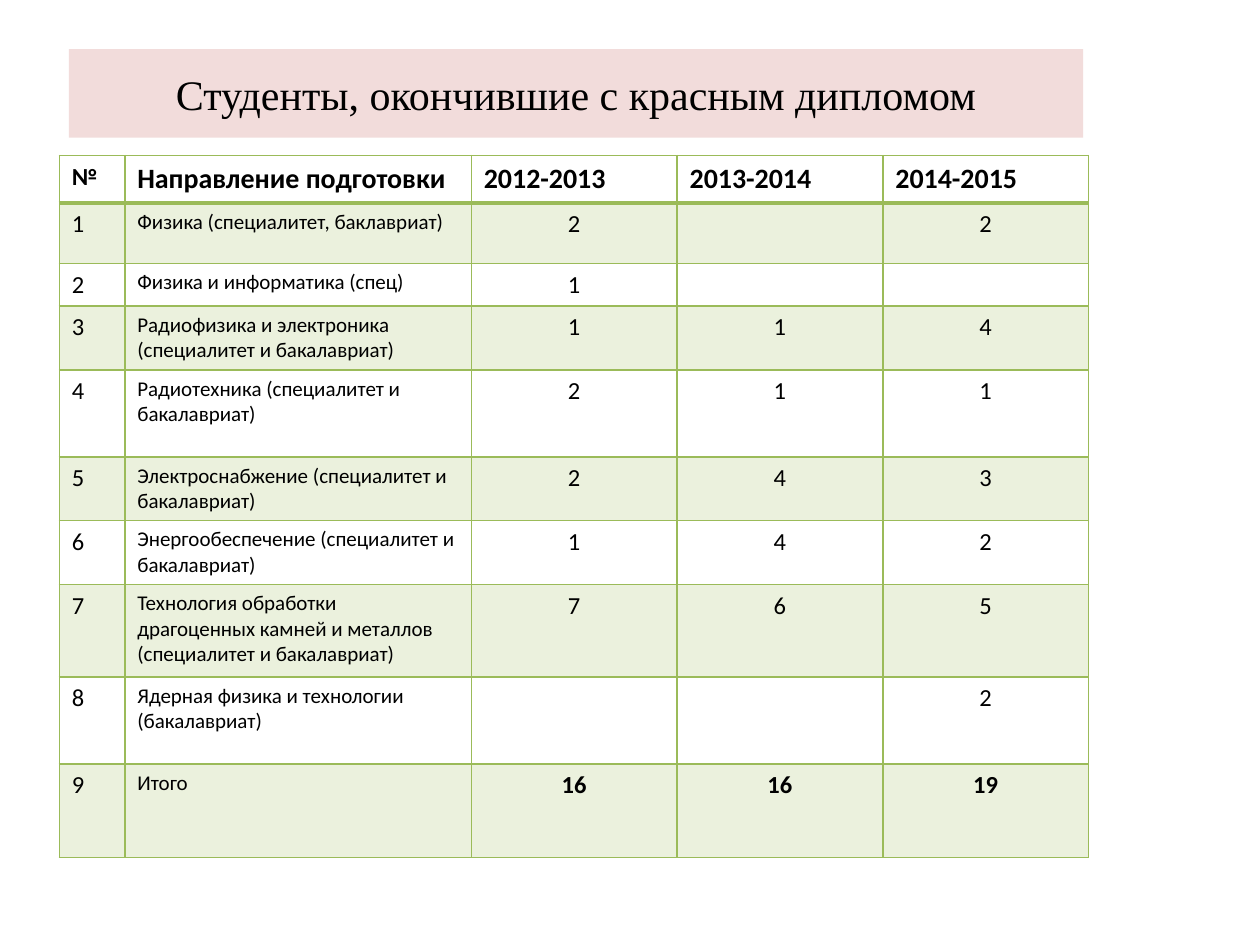
import pptx
import pptx.util
import pptx.dml.color
import pptx.enum.text
import pptx.oxml
import pptx.oxml.ns
from dataclasses import dataclass
from lxml import etree

Pt = pptx.util.Pt
RGB = pptx.dml.color.RGBColor.from_string
ALIGN = pptx.enum.text.PP_ALIGN
ANCHOR = pptx.enum.text.MSO_ANCHOR
qn = pptx.oxml.ns.qn


@dataclass(frozen=True)
class Theme:
    text: str = "000000"
    title_fill: str = "F2DCDB"
    accent: str = "9BBB59"
    band_alpha: int = 20
    title_font: str = "Times New Roman"
    body_font: str = "Calibri"
    title_size: int = 24
    head_size: int = 16
    body_size: int = 14
    name_size: int = 12


THEME = Theme()

TITLE = "Студенты, окончившие с красным дипломом"
HEADER = ("№", "Направление подготовки", "2012-2013", "2013-2014", "2014-2015")
# Programme, graduates by year, row height
PROGRAMMES = [
    ("Физика (специалитет, баклавриат)", (2, "", 2), 34.6),
    ("Физика и информатика (спец)", (1, "", ""), 24.3),
    ("Радиофизика и электроника (специалитет и бакалавриат)", (1, 1, 4), 36.5),
    ("Радиотехника (специалитет и бакалавриат)", (2, 1, 1), 49.7),
    ("Электроснабжение (специалитет и бакалавриат)", (2, 4, 3), 36.5),
    ("Энергообеспечение (специалитет и бакалавриат)", (1, 4, 2), 36.5),
    ("Технология обработки драгоценных камней и металлов "
     "(специалитет и бакалавриат)", (7, 6, 5), 52.9),
    ("Ядерная физика и технологии (бакалавриат)", ("", "", 2), 49.7),
    ("Итого", (16, 16, 19), 53.4),
]
HEADER_HEIGHT = 27.1
COLUMN_WIDTHS = (37.4, 198, 117.6, 117.6, 117.6)


def put_text(tf, text, size, font=THEME.body_font, bold=False, align=ALIGN.LEFT):
    p = tf.paragraphs[0]
    p.alignment = align
    if not text:
        # The end mark's size keeps an empty cell from stretching its row
        etree.SubElement(p._p, qn("a:endParaRPr"), sz=str(size * 100))
        return
    r = p.add_run()
    r.text = text
    r.font.name = font
    r.font.size = Pt(size)
    r.font.bold = bold
    r.font.color.rgb = RGB(THEME.text)


def set_borders(cell, bottom=1):
    tc_pr = cell._tc.get_or_add_tcPr()
    for i, (side, width) in enumerate(zip("LRTB", (1, 1, 1, bottom))):
        ln = etree.Element(qn(f"a:ln{side}"), w=str(Pt(width)))
        fill = etree.SubElement(ln, qn("a:solidFill"))
        etree.SubElement(fill, qn("a:srgbClr"), val=THEME.accent)
        tc_pr.insert(i, ln)


def set_band(cell, banded):
    if not banded:
        cell.fill.background()
        return
    cell.fill.solid()
    cell.fill.fore_color.rgb = RGB(THEME.accent)
    color = cell._tc.tcPr.find(".//" + qn("a:srgbClr"))
    etree.SubElement(color, qn("a:alpha"), val=str(THEME.band_alpha * 1000))


def add_title(s, left, top, width, height):
    sp = s.shapes.title
    sp.left, sp.top, sp.width, sp.height = map(Pt, (left, top, width, height))
    sp.fill.solid()
    sp.fill.fore_color.rgb = RGB(THEME.title_fill)
    tf = sp.text_frame
    tf.vertical_anchor = ANCHOR.MIDDLE
    put_text(tf, TITLE, THEME.title_size, font=THEME.title_font, align=ALIGN.CENTER)


def cell_format(row, col):
    if row == 0:
        return dict(size=THEME.head_size if col else THEME.body_size, bold=True)
    if col == 1:
        return dict(size=THEME.name_size)
    if col == 0:
        return dict(size=THEME.body_size)
    return dict(size=THEME.body_size, align=ALIGN.CENTER, bold=row == len(PROGRAMMES))


def add_graduates_table(s, left, top, width, height):
    """Fit the column and row proportions to the given box."""
    rows = [HEADER] + [(n, name, *counts)
                       for n, (name, counts, _) in enumerate(PROGRAMMES, 1)]
    heights = [HEADER_HEIGHT] + [h for _, _, h in PROGRAMMES]
    table = s.shapes.add_table(len(rows), len(HEADER), Pt(left), Pt(top),
                               Pt(width), Pt(height)).table
    table.first_row = table.horz_banding = False
    for column, w in zip(table.columns, COLUMN_WIDTHS):
        column.width = Pt(w * width / sum(COLUMN_WIDTHS))
    for i, (values, h) in enumerate(zip(rows, heights)):
        table.rows[i].height = Pt(h * height / sum(heights))
        for j, value in enumerate(values):
            cell = table.cell(i, j)
            put_text(cell.text_frame, str(value), **cell_format(i, j))
            set_band(cell, banded=i % 2 == 1)
            set_borders(cell, bottom=1 if i else 2)


def main():
    prs = pptx.Presentation()
    prs.slide_width, prs.slide_height = Pt(720), Pt(540)
    s = prs.slides.add_slide(prs.slide_layouts[5])
    add_title(s, 39.4, 28.1, 579.6, 50.6)
    add_graduates_table(s, 33.9, 88.9, 588.2, 401.2)
    prs.save("out.pptx")


if __name__ == "__main__":
    main()
